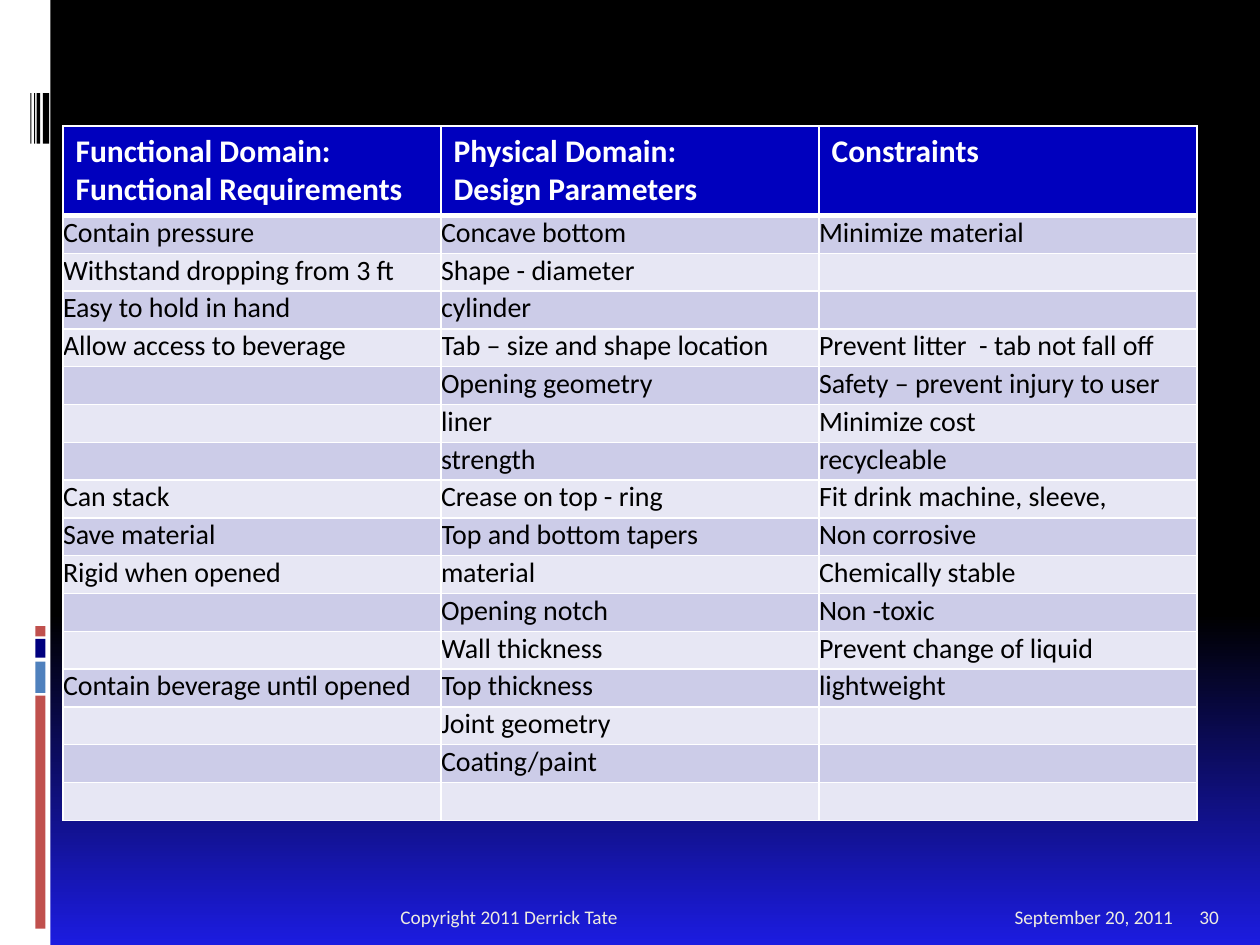
import dataclasses

import lxml.etree
import pptx
import pptx.dml.color
import pptx.enum.shapes
import pptx.enum.text
import pptx.oxml.ns
import pptx.util

Inches = pptx.util.Inches
Align = pptx.enum.text.PP_ALIGN
FONT = "Calibri"


@dataclasses.dataclass
class Bar:
    left: float
    top: float
    width: float
    height: float
    color: str


@dataclasses.dataclass
class FooterField:
    left: float
    width: float
    text: str
    align: Align


SIDE_BARS = [
    Bar(0, 0, 0.4, 7.5, "FFFFFF"),
    Bar(0.28, 5.52, 0.08, 1.85, "C0504D"),
    Bar(0.28, 5.25, 0.08, 0.25, "4F81BD"),
    Bar(0.28, 5.07, 0.08, 0.15, "00007F"),
    Bar(0.28, 4.97, 0.08, 0.08, "C0504D"),
] + [
    Bar(left, 0.74, width, 0.4, "000000")
    for left, width in [(0.34, 0.05), (0.29, 0.03), (0.27, 0.01), (0.24, 0.01)]
]

FOOTER = [
    FooterField(7.08, 2.33, "September 20, 2011", Align.RIGHT),
    FooterField(1, 6.08, "Copyright 2011 Derrick Tate", Align.CENTER),
    FooterField(9.42, 0.5, "30", Align.LEFT),
]

DESIGN_ROWS = [
    ("Functional Domain:\vFunctional Requirements",
     "Physical Domain:\vDesign Parameters", "Constraints"),
    ("Contain pressure", "Concave bottom", "Minimize material"),
    ("Withstand dropping from 3 ft", "Shape - diameter", ""),
    ("Easy to hold in hand", "cylinder", ""),
    ("Allow access to beverage", "Tab – size and shape location",
     "Prevent litter  - tab not fall off"),
    ("", "Opening geometry", "Safety – prevent injury to user"),
    ("", "liner", "Minimize cost"),
    ("", "strength", "recycleable"),
    ("Can stack", "Crease on top - ring", "Fit drink machine, sleeve,"),
    ("Save material", "Top and bottom tapers", "Non corrosive"),
    ("Rigid when opened", "material", "Chemically stable"),
    ("", "Opening notch", "Non -toxic"),
    ("", "Wall thickness", "Prevent change of liquid"),
    ("Contain beverage until opened", "Top thickness", "lightweight"),
    ("", "Joint geometry", ""),
    ("", "Coating/paint", ""),
    ("", "", ""),
]


def rgb(color: str) -> pptx.dml.color.RGBColor:
    return pptx.dml.color.RGBColor.from_string(color)


def style_paragraph(paragraph, size: float, color: str, bold: bool = False) -> None:
    paragraph.font.name = FONT
    paragraph.font.size = pptx.util.Pt(size)
    paragraph.font.bold = bold
    paragraph.font.color.rgb = rgb(color)


def draw_bar(slide, bar: Bar) -> None:
    block = slide.shapes.add_shape(
        pptx.enum.shapes.MSO_SHAPE.RECTANGLE,
        Inches(bar.left), Inches(bar.top), Inches(bar.width), Inches(bar.height))
    block.shadow.inherit = False
    block.fill.solid()
    block.fill.fore_color.rgb = rgb(bar.color)
    block.line.fill.background()


def draw_footer_field(slide, field: FooterField) -> None:
    frame = slide.shapes.add_textbox(
        Inches(field.left), Inches(7.02), Inches(field.width), Inches(0.4)).text_frame
    frame.word_wrap = True
    frame.vertical_anchor = pptx.enum.text.MSO_ANCHOR.BOTTOM
    frame.text = field.text
    frame.paragraphs[0].alignment = field.align
    style_paragraph(frame.paragraphs[0], 11, "EEECE1")


def add_borders(cell, top: float, bottom: float) -> None:
    properties = cell._tc.get_or_add_tcPr()
    for side, points in [("L", 1), ("R", 1), ("T", top), ("B", bottom)]:
        line = lxml.etree.SubElement(
            properties, pptx.oxml.ns.qn(f"a:ln{side}"), w=str(pptx.util.Pt(points)))
        fill = lxml.etree.SubElement(line, pptx.oxml.ns.qn("a:solidFill"))
        lxml.etree.SubElement(fill, pptx.oxml.ns.qn("a:srgbClr"), val="FFFFFF")


def fill_cell(cell, text: str, row: int) -> None:
    is_header = row == 0
    add_borders(cell, top=3 if row == 1 else 1, bottom=3 if is_header else 1)
    cell.fill.solid()
    band = "CCCCE8" if row % 2 else "E7E7F4"
    cell.fill.fore_color.rgb = rgb("0000BE" if is_header else band)
    cell.margin_left = cell.margin_right = Inches(0.1 if is_header else 0)
    cell.margin_top = cell.margin_bottom = Inches(0.05 if is_header else 0)
    cell.text = text
    paragraph = cell.text_frame.paragraphs[0]
    if is_header:
        style_paragraph(paragraph, 18, "FFFFFF", bold=True)
    else:
        style_paragraph(paragraph, 16, "000000")


def draw_design_table(slide) -> None:
    table = slide.shapes.add_table(
        len(DESIGN_ROWS), 3, Inches(0.5), Inches(1), Inches(9), Inches(5.5)).table
    for row, texts in enumerate(DESIGN_ROWS):
        table.rows[row].height = Inches(0.3 if row else 0.7)
        for column, text in enumerate(texts):
            fill_cell(table.cell(row, column), text, row)


def main() -> None:
    deck = pptx.Presentation()
    deck.slide_width, deck.slide_height = Inches(10), Inches(7.5)
    slide = deck.slides.add_slide(deck.slide_layouts[6])

    # Background: black, turning blue towards the bottom
    backdrop = slide.background.fill
    backdrop.gradient()
    backdrop.gradient_angle = 270
    for stop, (position, color) in zip(
            backdrop.gradient_stops, [(0.65, "000000"), (1, "1C1CE0")]):
        stop.position = position
        stop.color.rgb = rgb(color)

    # Side decoration
    for bar in SIDE_BARS:
        draw_bar(slide, bar)

    # Requirements, parameters and constraints
    draw_design_table(slide)

    # Footer
    for field in FOOTER:
        draw_footer_field(slide, field)

    deck.save("out.pptx")


if __name__ == "__main__":
    main()
